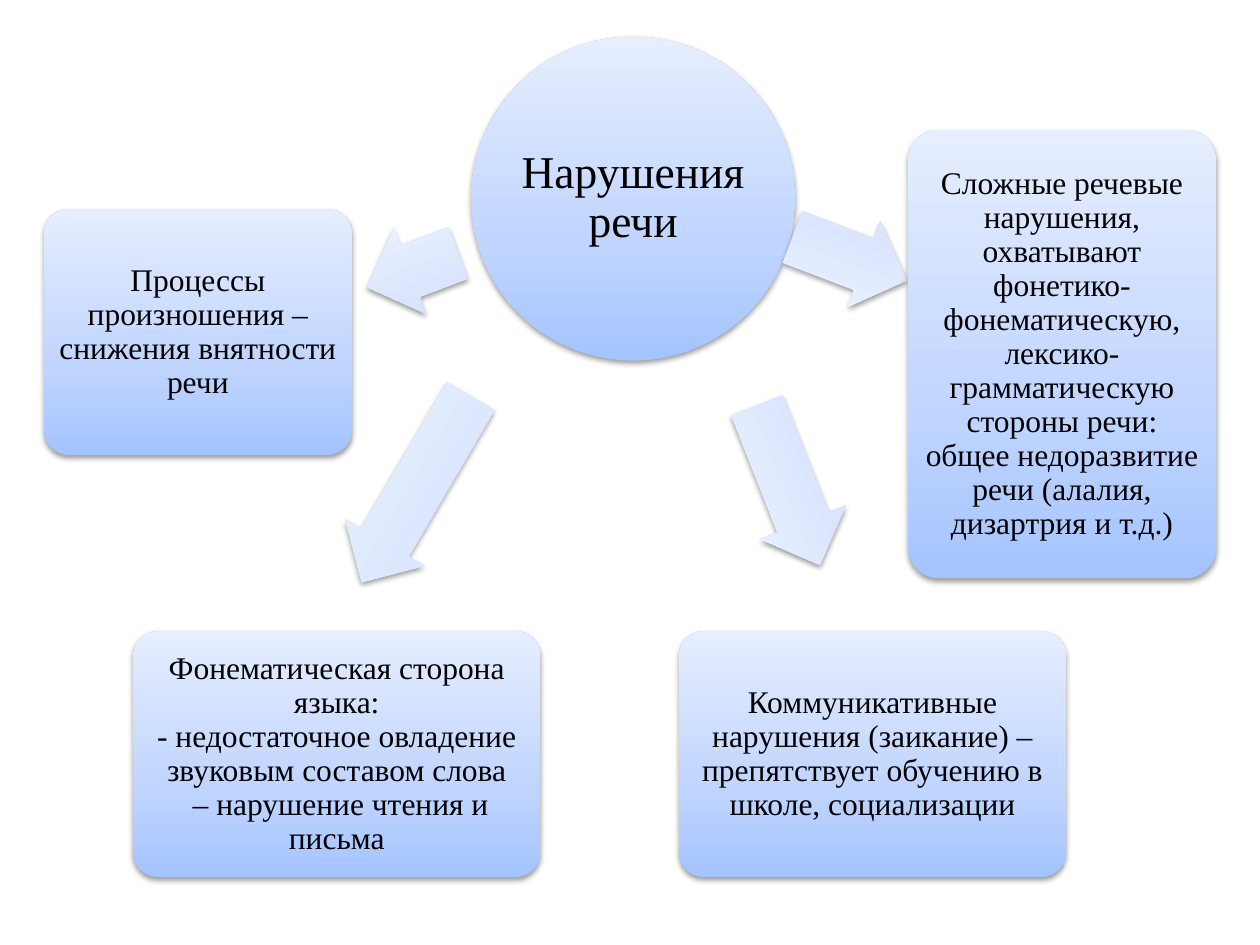
from copy import deepcopy

from lxml.etree import SubElement
from pptx import Presentation
from pptx.dml.color import RGBColor
from pptx.enum.shapes import MSO_SHAPE
from pptx.enum.text import MSO_ANCHOR, PP_ALIGN
from pptx.oxml.ns import qn
from pptx.util import Cm, Pt

COLOURS = {
    "text": "000000",
    "shadow": "000000",
    "node": ("A4C4FF", "BFD4FF", "E6EEFF"),
    "arrow": ("CDDDFE", "DBE6FE", "F0F5FF"),
}
STOPS = (0, 0.35, 1)


def write_text(shape, text, size=18, inset=0.1, font="Times New Roman", colour="text"):
    """Fill a shape with centred text, one paragraph per line."""
    frame = shape.text_frame
    frame.word_wrap = True
    frame.vertical_anchor = MSO_ANCHOR.MIDDLE
    frame.margin_left = frame.margin_right = Cm(inset)
    frame.margin_top = frame.margin_bottom = Cm(inset)
    for index, line in enumerate(text.split("\n")):
        para = frame.add_paragraph() if index else frame.paragraphs[0]
        para.alignment = PP_ALIGN.CENTER
        para.line_spacing = 0.9
        span = para.add_run()
        span.text = line
        span.font.name = font
        span.font.size = Pt(size)
        span.font.color.rgb = RGBColor.from_string(COLOURS[colour])


class Diagram:
    """Hold the slide and the shared look of the diagram's shapes."""

    def __init__(self, page):
        self.page = page

    def shape(self, kind, bounds, palette):
        """Add a shape with a vertical gradient and a soft shadow."""
        shape = self.page.shapes.add_shape(kind, *map(Cm, bounds))
        shape.line.fill.background()
        shape.fill.gradient()
        shape.fill.gradient_angle = 90
        stop_list = shape._element.spPr.find(".//" + qn("a:gsLst"))
        stop_list.append(deepcopy(stop_list[0]))
        for stop, position, colour in zip(shape.fill.gradient_stops, STOPS, COLOURS[palette]):
            stop.position = position
            stop.color.rgb = RGBColor.from_string(colour)
        self.shadow(shape)
        return shape

    def shadow(self, shape):
        """Cast a short shadow straight down."""
        shape.shadow.inherit = False
        effects = shape._element.spPr.find(qn("a:effectLst"))
        shadow = SubElement(effects, qn("a:outerShdw"), blurRad="40000", dist="20000",
                            dir="5400000", rotWithShape="0")
        colour = SubElement(shadow, qn("a:srgbClr"), val=COLOURS["shadow"])
        SubElement(colour, qn("a:alpha"), val="38000")

    def circle(self, bounds, text):
        """Add the central topic."""
        shape = self.shape(MSO_SHAPE.OVAL, bounds, "node")
        write_text(shape, text, size=26, inset=0.05)

    def box(self, bounds, text):
        """Add a rounded box with a description."""
        shape = self.shape(MSO_SHAPE.ROUNDED_RECTANGLE, bounds, "node")
        shape.adjustments[0] = 0.1
        write_text(shape, text)

    def arrow(self, left, top, width, rotation):
        """Add a block arrow turned away from the topic."""
        shape = self.shape(MSO_SHAPE.LEFT_ARROW, (left, top, width, 1.85), "arrow")
        shape.adjustments[0] = 0.6
        shape.adjustments[1] = 0.5
        shape.rotation = rotation


BRANCHES = (
    ((7.34, 4.52, 1.96, 339.3), (0.89, 4.22, 6.2, 4.95),
     "Процессы произношения – снижения внятности речи"),
    ((6.22, 8.94, 4.34, 300.4), (2.69, 12.73, 8.2, 4.95),
     "Фонематическая сторона языка:\n"
     "- недостаточное овладение звуковым составом слова\n"
     " – нарушение чтения и письма"),
    ((14.17, 8.86, 3.45, 248.5), (13.69, 12.73, 7.8, 4.95),
     "Коммуникативные нарушения (заикание) – препятствует обучению в школе, социализации"),
    ((15.9, 4.29, 2.46, 200.8), (18.31, 2.62, 6.2, 9.04),
     "Сложные речевые нарушения, охватывают фонетико-фонематическую, "
     "лексико-грамматическую стороны речи: общее недоразвитие речи "
     "(алалия, дизартрия и т.д.)"),
)


def main():
    """Build the deck and save it."""
    deck = Presentation()
    deck.slide_width, deck.slide_height = Cm(25.4), Cm(19.05)
    diagram = Diagram(deck.slides.add_slide(deck.slide_layouts[6]))
    diagram.circle((9.5, 0.74, 6.53, 6.53), "Нарушения речи")
    for arrow, bounds, text in BRANCHES:
        diagram.arrow(*arrow)
        diagram.box(bounds, text)
    deck.save("out.pptx")


if __name__ == "__main__":
    main()
